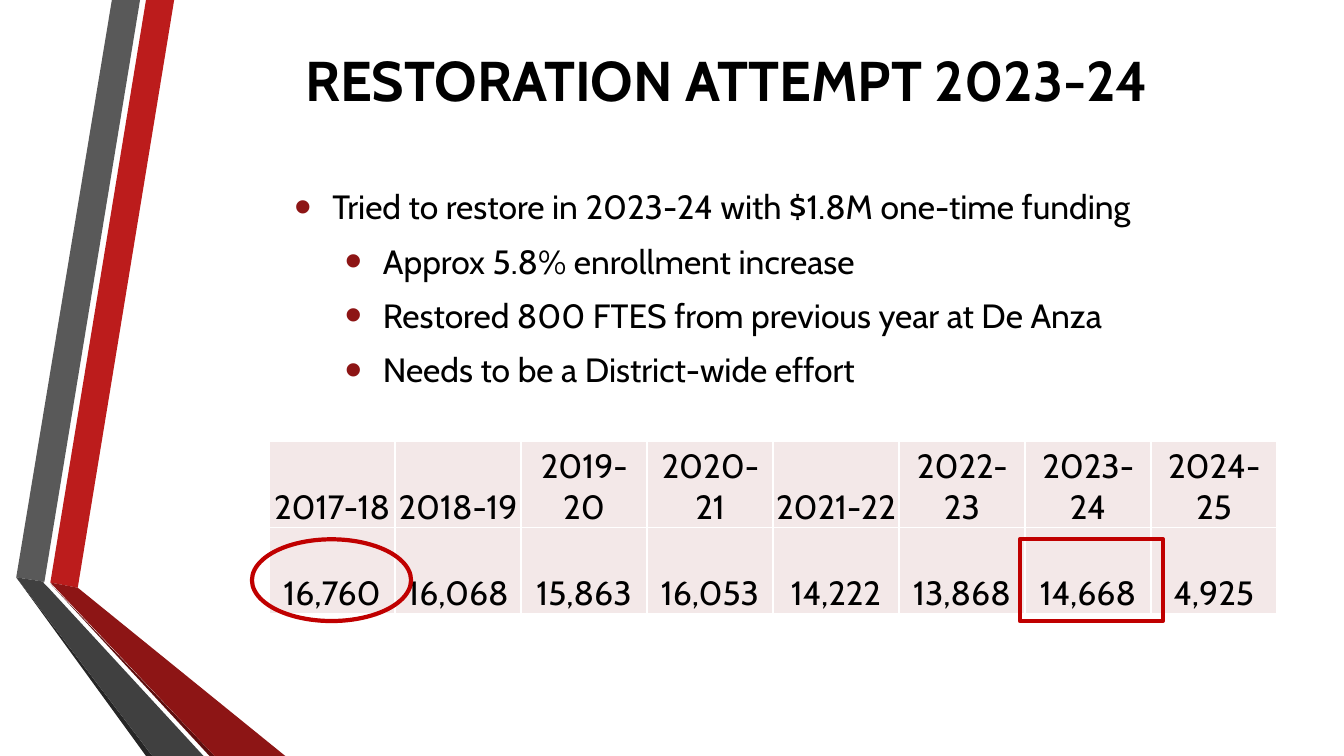
"""Build the restoration attempt slide with its enrollment table."""
from lxml.etree import SubElement
from pptx import Presentation
from pptx.dml.color import RGBColor
from pptx.enum.shapes import MSO_SHAPE as Shape
from pptx.enum.text import MSO_ANCHOR as Anchor, PP_ALIGN as Align
from pptx.oxml.ns import qn
from pptx.util import Cm, Pt

RIBBONS = [
    ("BC1C1C", [(1.27, 14.68), (1.96, 14.81), (4.39, 0), (3.68, 0)]),
    ("595959", [(3.53, 0), (2.82, 0), (0.41, 14.55), (1.12, 14.66)]),
    ("262626", [(0.41, 14.55), (3.68, 19.05), (3.84, 19.05)]),
    ("5E0E0E", [(1.27, 14.71), (5.28, 19.05), (5.41, 19.05)]),
    ("8D1515", [(1.27, 14.68), (5.41, 19.05), (7.19, 19.05), (1.96, 14.81)]),
    ("404040", [(5.13, 19.05), (1.22, 14.81), (1.09, 14.68), (1.12, 14.66),
                (0.41, 14.55), (3.84, 19.05)]),
]
BULLETS = [
    (0, "Tried to restore in 2023-24 with $1.8M one-time funding"),
    (1, "Approx 5.8% enrollment increase"),
    (1, "Restored 800 FTES from previous year at De Anza"),
    (1, "Needs to be a District-wide effort"),
]
ENROLLMENT = [
    ["2017-18", "2018-19", "2019-20", "2020-21",
     "2021-22", "2022-23", "2023-24", "2024-25"],
    ["16,760", "16,068", "15,863", "16,053",
     "14,222", "13,868", "14,668", "4,925"],
]


def color(value):
    return RGBColor.from_string(value)


class SlideBuilder:
    font = "Cabin"
    text_color = "000000"
    bullet_color = "8D1515"
    cell_color = "F3E8E8"
    border_color = "FFFFFF"
    mark_color = "C00000"

    def __init__(self, slide):
        self.slide = slide

    def format_runs(self, paragraph, size, bold=False):
        for run in paragraph.runs:
            run.font.name = self.font
            run.font.size = Pt(size)
            run.font.bold = bold
            run.font.color.rgb = color(self.text_color)

    def ribbon(self, fill, points):
        corners = [(Cm(x), Cm(y)) for x, y in points]
        builder = self.slide.shapes.build_freeform(*corners[0])
        builder.add_line_segments(corners[1:])
        shape = builder.convert_to_shape()
        shape.shadow.inherit = False
        shape.fill.solid()
        shape.fill.fore_color.rgb = color(fill)
        shape.line.fill.background()

    def text_frame(self, left, top, width, height, anchor):
        box = self.slide.shapes.add_textbox(Cm(left), Cm(top), Cm(width), Cm(height))
        box.text_frame.word_wrap = True
        box.text_frame.vertical_anchor = anchor
        return box.text_frame

    def title(self, text, *place):
        frame = self.text_frame(*place, Anchor.BOTTOM)
        frame.text = text
        paragraph = frame.paragraphs[0]
        paragraph.alignment = Align.CENTER
        self.format_runs(paragraph, 40, bold=True)

    def bullets(self, items, *place):
        frame = self.text_frame(*place, Anchor.TOP)
        frame.text = "\n".join(text for level, text in items)
        for paragraph, (level, text) in zip(frame.paragraphs, items):
            paragraph.level = level
            paragraph.space_before = Pt(4)
            paragraph.space_after = Pt(6)
            self.format_runs(paragraph, 24)
            self.bullet(paragraph, 2.21 + 1.27 * level)

    def bullet(self, paragraph, margin):
        properties = paragraph._p.get_or_add_pPr()
        properties.set("marL", str(Cm(margin)))
        properties.set("indent", str(Cm(-0.96)))
        tint = SubElement(properties, qn("a:buClr"))
        SubElement(tint, qn("a:srgbClr"), val=self.bullet_color)
        SubElement(properties, qn("a:buSzPct"), val="145000")
        SubElement(properties, qn("a:buFont"), typeface="Arial")
        SubElement(properties, qn("a:buChar"), char="•")

    def table(self, rows, left, top, width, height):
        table = self.slide.shapes.add_table(
            len(rows), len(rows[0]), Cm(left), Cm(top), Cm(width), Cm(height)).table
        table.first_row = table.horz_banding = False
        for row, values in enumerate(rows):
            for column, text in enumerate(values):
                self.cell(table.cell(row, column), text)

    def cell(self, cell, text):
        cell.text = text
        cell.vertical_anchor = Anchor.BOTTOM
        cell.margin_left = cell.margin_right = cell.margin_top = Cm(0.03)
        cell.margin_bottom = 0
        paragraph = cell.text_frame.paragraphs[0]
        paragraph.alignment = Align.CENTER
        self.format_runs(paragraph, 24)
        properties = cell._tc.get_or_add_tcPr()
        for side in ("lnL", "lnR", "lnT", "lnB"):
            border = SubElement(properties, qn(f"a:{side}"), w=str(Pt(1)))
            fill = SubElement(border, qn("a:solidFill"))
            SubElement(fill, qn("a:srgbClr"), val=self.border_color)
        cell.fill.solid()
        cell.fill.fore_color.rgb = color(self.cell_color)

    def mark(self, kind, left, top, width, height):
        shape = self.slide.shapes.add_shape(
            kind, Cm(left), Cm(top), Cm(width), Cm(height))
        shape.shadow.inherit = False
        shape.fill.background()
        shape.line.color.rgb = color(self.mark_color)
        shape.line.width = Pt(3)


def main():
    presentation = Presentation()
    presentation.slide_width = Cm(33.87)
    presentation.slide_height = Cm(19.05)
    slide = presentation.slides.add_slide(presentation.slide_layouts[6])
    builder = SlideBuilder(slide)
    for fill, points in RIBBONS:
        builder.ribbon(fill, points)
    builder.title("RESTORATION ATTEMPT 2023-24", 5.92, 0.91, 24.79, 2.06)
    builder.bullets(BULLETS, 5.92, 4.57, 27.3, 6.38)
    builder.table(ENROLLMENT, 6.78, 11.13, 25.4, 4.34)
    builder.mark(Shape.OVAL, 6.35, 13.59, 4.01, 2.06)
    builder.mark(Shape.RECTANGLE, 25.7, 13.59, 3.61, 2.06)
    presentation.save("out.pptx")


if __name__ == "__main__":
    main()
